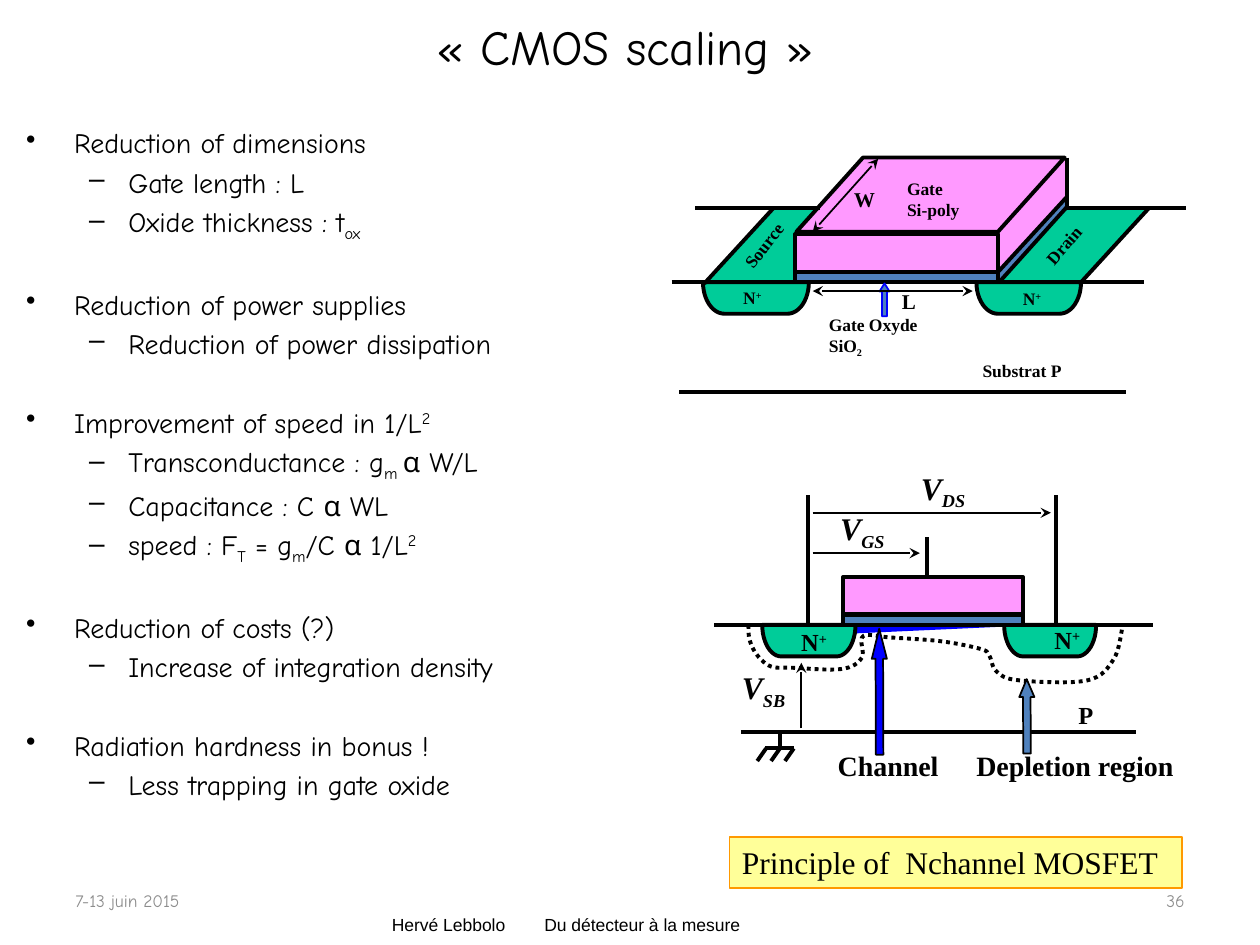
from lxml.etree import SubElement
from pptx import Presentation
from pptx.dml.color import RGBColor
from pptx.enum.dml import MSO_LINE
from pptx.enum.shapes import MSO_CONNECTOR, MSO_SHAPE
from pptx.enum.text import MSO_ANCHOR, MSO_AUTO_SIZE, PP_ALIGN
from pptx.oxml.ns import qn
from pptx.util import Inches, Pt
from math import cos, pi, sin

COLORS = {"ink": "000000", "grey": "8C8C8C", "well": "00CC99", "gate": "FF99FF",
          "oxide": "4F81BD", "channel": "0000FF", "note": "FFFF99", "note_edge": "FF9900"}
HAND, SERIF, SANS = "Comic Neue", "Times New Roman", "Arial"
SUB, SUPER = -25, 30
THICK, THIN = 2.25, 1

BULLETS = [  # (level, spans); a span is plain text or (text, baseline)
    (0, ["Reduction of dimensions"]),
    (1, ["Gate length : L"]),
    (1, ["Oxide thickness : t", ("ox", SUB)]),
    (0, ["Reduction of power supplies"]),
    (1, ["Reduction of power dissipation"]),
    (0, ["Improvement of speed in 1/L", ("2", SUPER)]),
    (1, ["Transconductance : g", ("m ", SUB), "α W/L"]),
    (1, ["Capacitance : C α WL"]),
    (1, ["speed : F", ("T", SUB), " = g", ("m", SUB), "/C α 1/L", ("2", SUPER)]),
    (0, ["Reduction of costs (?)"]),
    (1, ["Increase of integration density"]),
    (0, ["Radiation hardness in bonus !"]),
    (1, ["Less trapping in gate oxide"]),
]
N_PLUS = ["N", ("+", SUPER)]
DEPLETION_EDGE = [
    (5.94, 4.96), (5.95, 5.08), (6.01, 5.2), (6.12, 5.29), (6.29, 5.3), (6.68, 5.31),
    (6.84, 5.22), (6.85, 5.05), (7.07, 5.06), (7.47, 5.09), (7.78, 5.15), (7.85, 5.2),
    (7.91, 5.33), (8.09, 5.4), (8.63, 5.4), (8.84, 5.23), (8.91, 4.97)]


def rgb(name):
    return RGBColor.from_string(COLORS[name])


def add_spans(para, spans, size, font, color="ink", bold=False, italic=False):
    for item in spans:
        text, baseline = (item, 0) if isinstance(item, str) else item
        span = para.add_run()
        span.text = text
        span.font.size, span.font.name = Pt(size), font
        span.font.bold, span.font.italic = bold, italic
        span.font.color.rgb = rgb(color)
        if baseline:
            span._r.get_or_add_rPr().set("baseline", str(baseline * 1000))


def add_text(shapes, at, lines, size, font, wrap=True, rotation=0, align=PP_ALIGN.LEFT,
             anchor=MSO_ANCHOR.TOP, **style):
    box = shapes.add_textbox(*map(Inches, at))
    box.rotation = rotation
    frame = box.text_frame
    frame.word_wrap, frame.vertical_anchor = wrap, anchor
    for index, spans in enumerate(lines):
        para = frame.add_paragraph() if index else frame.paragraphs[0]
        para.alignment = align
        add_spans(para, spans, size, font, **style)
    return box


def add_label(shapes, at, lines, size, wrap=False, rotation=0, italic=False):
    box = add_text(shapes, at, lines, size, SERIF, wrap, rotation, bold=True, italic=italic)
    box.text_frame.auto_size = MSO_AUTO_SIZE.SHAPE_TO_FIT_TEXT


def paint(shape, fill, line=None, width=THICK):
    shape.shadow.inherit = False
    if fill:
        shape.fill.solid()
        shape.fill.fore_color.rgb = rgb(fill)
    else:
        shape.fill.background()
    if line:
        shape.line.color.rgb = rgb(line)
        shape.line.width = Pt(width)
    else:
        shape.line.fill.background()


def add_block(shapes, kind, at, fill, line=None, width=THICK, adjust=(), rotation=0):
    block = shapes.add_shape(kind, *map(Inches, at))
    for index, value in enumerate(adjust):
        block.adjustments[index] = value
    block.rotation = rotation
    paint(block, fill, line, width)
    return block


def add_line(shapes, x1, y1, x2, y2, width=THICK, arrows=()):
    line = shapes.add_connector(MSO_CONNECTOR.STRAIGHT, *map(Inches, (x1, y1, x2, y2)))
    line.line.color.rgb = rgb("ink")
    line.line.width = Pt(width)
    outline = line.line._get_or_add_ln()
    for end in arrows:
        SubElement(outline, qn(f"a:{end}"), type="stealth")
    SubElement(line._element.spPr, qn("a:effectLst"))


def add_outline(shapes, points, fill, closed):
    start, *rest = [(Inches(x), Inches(y)) for x, y in points]
    builder = shapes.build_freeform(*start, scale=1.0)
    builder.add_line_segments(rest, close=closed)
    outline = builder.convert_to_shape()
    paint(outline, fill, "ink")
    return outline


def add_well(shapes, left, right, top, radius, depth=0.25, steps=12):
    """Draw an N+ well: flat bottom with elliptical lower corners."""
    angles = [step * pi / 2 / steps for step in range(steps + 1)]
    corner = [(radius * (1 - cos(a)), top + depth * sin(a)) for a in angles]
    points = [(left + x, y) for x, y in corner] + [(right - x, y) for x, y in corner[::-1]]
    add_outline(shapes, points, "well", True)


def smooth_through(knots, steps=8):
    """Return points of a Catmull-Rom curve through the knots."""
    padded = [knots[0], *knots, knots[-1]]
    points = [knots[0]]
    for quad in zip(padded, padded[1:], padded[2:], padded[3:]):
        for t in (step / steps for step in range(1, steps + 1)):
            points.append(tuple(
                b + t * (c - a) / 2 + t * t * (2 * a - 5 * b + 4 * c - d) / 2
                + t ** 3 * (3 * b - a - 3 * c + d) / 2 for a, b, c, d in zip(*quad)))
    return points


def add_bullets(page):
    box = add_text(page.shapes, (0.11, 0.95, 5.31, 6.23), [], 16, HAND)
    layouts = [("•", 0.38, -0.38, 25.7), ("–", 0.81, -0.31, 3.2)]
    for index, (level, spans) in enumerate(BULLETS):
        para = box.text_frame.add_paragraph() if index else box.text_frame.paragraphs[0]
        mark, margin, indent, space = layouts[level]
        props = para._p.get_or_add_pPr()
        props.set("marL", str(Inches(margin)))
        props.set("indent", str(Inches(indent)))
        SubElement(props, qn("a:buChar"), char=mark)
        para.level = level
        para.space_before = Pt(space if index else 0)
        add_spans(para, spans, 16, HAND)


def draw_perspective(shapes):
    rect, slant = MSO_SHAPE.RECTANGLE, MSO_SHAPE.PARALLELOGRAM
    # Source and drain
    add_block(shapes, slant, (5.59, 1.66, 2.13, 0.59), "well", adjust=[0.898])
    add_well(shapes, 7.75, 8.58, 2.24, 0.17)
    add_well(shapes, 5.58, 6.42, 2.24, 0.17)
    add_block(shapes, slant, (6.98, 1.64, 2.13, 0.59), "well", adjust=[0.898])
    # Gate and oxide layers
    add_block(shapes, rect, (6.86, 1.26, 1.61, 0.31), "gate")
    add_block(shapes, slant, (6.3, 1.66, 2.16, 0.59), "oxide", adjust=[0.91])
    add_block(shapes, rect, (6.85, 1.59, 1.61, 0.08), "oxide")
    add_line(shapes, 5.33, 2.24, 9.08, 2.24)
    add_line(shapes, 5.39, 3.11, 8.94, 3.11)
    add_block(shapes, rect, (6.31, 2.16, 1.61, 0.08), "oxide", "ink")
    add_block(shapes, slant, (6.3, 1.56, 2.16, 0.59), "gate", adjust=[0.91])
    add_block(shapes, slant, (6.32, 1.25, 2.13, 0.59), "gate", "ink", adjust=[0.898])
    add_block(shapes, rect, (6.31, 1.86, 1.61, 0.3), "gate", "ink")
    # Edges
    for ends in [(7.93, 2.24, 8.47, 1.64), (8.47, 1.25, 8.47, 1.64), (7.92, 2.16, 8.47, 1.56),
                 (5.52, 1.65, 6.51, 1.65), (8.47, 1.65, 9.41, 1.65),
                 (8.58, 2.24, 9.12, 1.65), (5.59, 2.25, 6.14, 1.65)]:
        add_line(shapes, *ends)
    # Labels and dimensions
    add_label(shapes, (7.7, 2.81, 0.83, 0.27), [["Substrat P"]], 10)
    add_label(shapes, (8.17, 1.81, 0.55, 0.27), [["Drain"]], 10, rotation=311.2)
    add_label(shapes, (5.76, 1.81, 0.61, 0.27), [["Source"]], 10, rotation=308)
    add_label(shapes, (7.1, 1.36, 0.62, 0.43), [["Gate"], ["Si-poly"]], 10)
    add_label(shapes, (6.48, 2.44, 1.1, 0.43), [["Gate Oxyde"], ["SiO", ("2", SUB)]], 10, wrap=True)
    add_block(shapes, MSO_SHAPE.UP_ARROW, (6.98, 2.25, 0.08, 0.26), "oxide", "channel", THIN,
              [0.5, 0.798])
    add_label(shapes, (8.02, 2.24, 0.36, 0.27), [N_PLUS], 10)
    add_label(shapes, (5.8, 2.23, 0.36, 0.27), [N_PLUS], 10)
    add_line(shapes, 6.45, 1.84, 6.97, 1.26, THIN, ["headEnd", "tailEnd"])
    add_label(shapes, (6.68, 1.43, 0.37, 0.3), [["W"]], 12, rotation=359.4)
    add_line(shapes, 6.45, 2.31, 7.72, 2.31, THIN, ["headEnd", "tailEnd"])
    add_label(shapes, (7.06, 2.24, 0.31, 0.3), [["L"]], 12)


def draw_section(shapes):
    rect, arrow = MSO_SHAPE.RECTANGLE, MSO_SHAPE.UP_ARROW
    # Channel, wells, substrate and gate stack
    add_block(shapes, rect, (6.78, 4.92, 1.21, 0.08), "channel", rotation=357.4)
    add_well(shapes, 7.97, 8.7, 4.96, 0.15)
    add_well(shapes, 6.05, 6.79, 4.96, 0.15)
    add_line(shapes, 5.67, 4.96, 9.15, 4.96)
    add_line(shapes, 5.88, 5.81, 9.02, 5.81)
    add_block(shapes, rect, (6.69, 4.88, 1.43, 0.08), "oxide", "ink")
    add_block(shapes, rect, (6.69, 4.58, 1.43, 0.29), "gate", "ink")
    add_label(shapes, (8.46, 5.51, 0.32, 0.33), [["P"]], 14)
    add_label(shapes, (8.27, 4.91, 0.41, 0.33), [N_PLUS], 14)
    add_label(shapes, (6.26, 4.93, 0.41, 0.33), [N_PLUS], 14)
    # Contacts and ground symbol
    for ends in [(8.38, 4.96, 8.38, 3.93), (6.41, 4.96, 6.41, 3.93), (7.36, 4.57, 7.36, 4.26),
                 (6.19, 5.8, 6.19, 5.94), (6.07, 5.94, 6.3, 5.94)]:
        add_line(shapes, *ends)
    for x in (6.08, 6.19, 6.3):
        add_line(shapes, x, 5.94, x - 0.07, 6.04)
    # Voltages
    for ends, name, at in [((6.45, 4.39, 7.3, 4.39), "GS", (6.57, 3.99, 0.58, 0.4)),
                           ((6.45, 4.07, 8.34, 4.07), "DS", (7.21, 3.67, 0.58, 0.4)),
                           ((6.36, 5.78, 6.36, 5.26), "SB", (5.79, 5.25, 0.57, 0.4))]:
        add_line(shapes, *ends, THIN, ["tailEnd"])
        add_label(shapes, at, [["V", (name, SUB)]], 18, italic=True)
    # Depletion region and channel
    edge = add_outline(shapes, smooth_through(DEPLETION_EDGE), None, False)
    edge.line.dash_style = MSO_LINE.ROUND_DOT
    add_label(shapes, (7.65, 5.89, 1.78, 0.37), [["Depletion region"]], 16, wrap=True)
    add_block(shapes, arrow, (8.09, 5.39, 0.12, 0.59), "oxide", "ink", THIN, [0.5, 1.188], 359.8)
    add_label(shapes, (6.55, 5.89, 1, 0.37), [["Channel"]], 16, wrap=True)
    add_block(shapes, arrow, (6.92, 4.99, 0.12, 1), "channel", "ink", THIN, [0.5, 1.993], 359.8)


def main():
    deck = Presentation()
    deck.slide_width, deck.slide_height = Inches(10), Inches(7.5)
    page = deck.slides.add_slide(deck.slide_layouts[5])
    # Title
    title = page.shapes.title
    title.left, title.top, title.width, title.height = map(Inches, (0.42, 0.08, 9.08, 0.67))
    title.text_frame.vertical_anchor = MSO_ANCHOR.TOP
    para = title.text_frame.paragraphs[0]
    para.alignment = PP_ALIGN.CENTER
    add_spans(para, ["« CMOS scaling »"], 28, HAND)
    # Content
    add_bullets(page)
    draw_perspective(page.shapes.add_group_shape().shapes)
    draw_section(page.shapes.add_group_shape().shapes)
    # Caption
    note = add_block(page.shapes, MSO_SHAPE.RECTANGLE, (5.79, 6.64, 3.59, 0.41), "note",
                     "note_edge", THIN)
    note.text_frame.word_wrap, note.text_frame.vertical_anchor = True, MSO_ANCHOR.TOP
    para = note.text_frame.paragraphs[0]
    para.alignment = PP_ALIGN.LEFT
    add_spans(para, ["Principle of  Nchannel MOSFET"], 18, SERIF)
    # Footer
    middle = MSO_ANCHOR.MIDDLE
    add_text(page.shapes, (8.31, 6.95, 1.19, 0.4), [["36"]], 10, HAND, align=PP_ALIGN.RIGHT,
             anchor=middle, color="grey")
    add_text(page.shapes, (0.5, 6.95, 1.51, 0.4), [["7-13 juin 2015"]], 10, HAND,
             anchor=middle, color="grey")
    footer = add_text(page.shapes, (1.61, 7.21, 5.75, 0.25),
                      [["Hervé Lebbolo\tDu détecteur à la mesure"]], 10, SANS, anchor=middle)
    footer.text_frame.margin_left = Inches(1.5)
    tabs = SubElement(footer.text_frame.paragraphs[0]._p.get_or_add_pPr(), qn("a:tabLst"))
    SubElement(tabs, qn("a:tab"), pos=str(Inches(1.21)), algn="l")
    deck.save("out.pptx")


if __name__ == "__main__":
    main()
